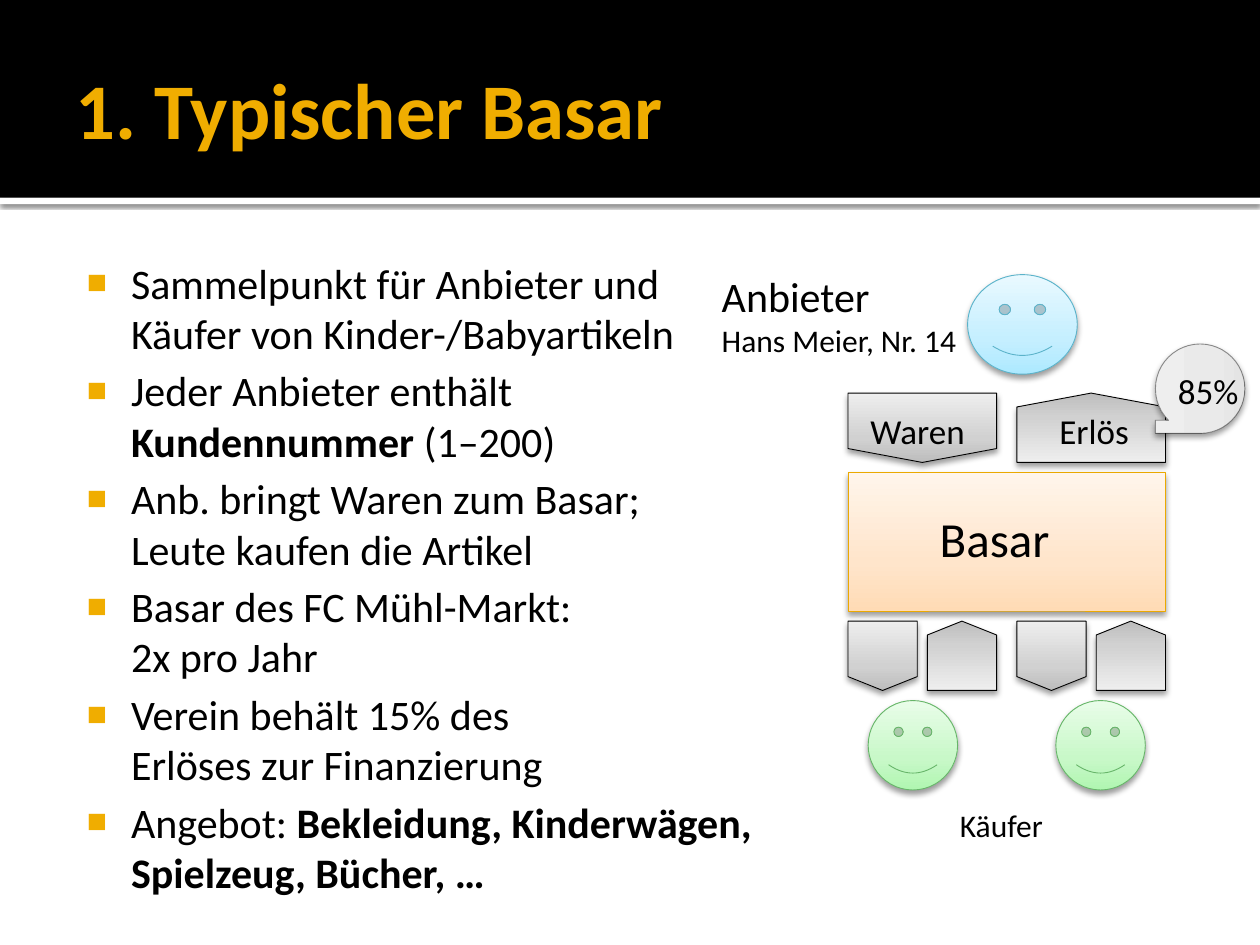
import copy
import pptx
import pptx.dml.color
import pptx.enum.shapes
import pptx.enum.text
import pptx.oxml
import pptx.oxml.ns
import pptx.util

Inches = pptx.util.Inches
Pt = pptx.util.Pt
KIND = pptx.enum.shapes.MSO_SHAPE
FIT = pptx.enum.text.MSO_AUTO_SIZE
GOLD, BLACK, WHITE = "F0AD00", "000000", "FFFFFF"
GREY = ["BDBDBD", "D1D1D1", "EEEEEE"]
PALE = ["E4E4E4", "EAEAEA", "EEEEEE"]
PEACH = ["FFDBB5", "FFE5CB", "FFF5EB"]
BLUE = ["ADE9FF", "C5EFFF", "E9F9FF"]
GREEN = ["B0F6B1", "C8F8C8", "E9FDE9"]
ITEMS = [
    [("Sammelpunkt für Anbieter und\nKäufer von Kinder-/Babyartikeln", False)],
    [("Jeder Anbieter enthält\n", False), ("Kundennummer", True), (" (1–200)", False)],
    [("Anb. bringt Waren zum Basar;\nLeute kaufen die Artikel", False)],
    [("Basar des FC Mühl-Markt:\n2x pro Jahr", False)],
    [("Verein behält 15% des\nErlöses zur Finanzierung", False)],
    [("Angebot: ", False), ("Bekleidung, Kinderwägen,\nSpielzeug, Bücher, …", True)],
]


def color(code):
    return pptx.dml.color.RGBColor.from_string(code)


def node(tag, text="", **attrs):
    pairs = " ".join(f'{key}="{val}"' for key, val in attrs.items())
    space = pptx.oxml.ns.nsdecls("a")
    return pptx.oxml.parse_xml(f"<a:{tag} {space} {pairs}>{text}</a:{tag}>")


def style(par, size, code=BLACK):
    par.font.name = "Calibri"
    par.font.size = Pt(size)
    par.font.color.rgb = color(code)


def write(par, text):
    runs = []
    for num, line in enumerate(text.split("\n")):
        if num:
            par.add_line_break()
        if line:
            run = par.add_run()
            run.text = line
            runs.append(run)
    return runs


def place(shape, box):
    shape.left, shape.top, shape.width, shape.height = map(Inches, box)


def inset(frame, left, top, right, low):
    frame.margin_left, frame.margin_top = Inches(left), Inches(top)
    frame.margin_right, frame.margin_bottom = Inches(right), Inches(low)


def shade(shape, alpha=38, blur=3.5, dist=2):
    shape.shadow.inherit = False
    tone = f'<a:srgbClr val="{BLACK}"><a:alpha val="{alpha * 1000}"/></a:srgbClr>'
    effect = node("outerShdw", tone, blurRad=Pt(blur), dist=Pt(dist), dir=5400000,
                  algn="ctr", rotWithShape=0)
    shape.element.spPr.find(pptx.oxml.ns.qn("a:effectLst")).append(effect)


def bar(slide, box, code):
    shape = slide.shapes.add_shape(KIND.RECTANGLE, *map(Inches, box))
    shape.fill.solid()
    shape.fill.fore_color.rgb = color(code)
    shape.line.fill.background()
    shape.shadow.inherit = False
    return shape


def figure(slide, kind, box, tones, edge=BLACK, flip=None, angle=90):
    shape = slide.shapes.add_shape(kind, *map(Inches, box))
    shape.fill.gradient()
    shape.fill.gradient_angle = angle
    stops = next(shape.element.spPr.iter(pptx.oxml.ns.qn("a:gsLst")))
    stops.insert(1, copy.deepcopy(stops[0]))
    for stop, spot, tone in zip(shape.fill.gradient_stops, (0, 0.35, 1), tones):
        stop.position = spot
        stop.color.rgb = color(tone)
    shape.line.color.rgb = color(edge)
    shape.line.width = Pt(0.5)
    if flip:
        shape.element.spPr.xfrm.set(flip, "1")
    shade(shape)
    return shape


def label(slide, box, text, size):
    frame = slide.shapes.add_textbox(*map(Inches, box)).text_frame
    frame.word_wrap = True
    frame.auto_size = FIT.SHAPE_TO_FIT_TEXT
    par = frame.paragraphs[0]
    style(par, size)
    return write(par, text)


def header(slide, left, top, width, height):
    strip = bar(slide, (left, top + height, width, 0.05), WHITE)
    shade(strip, 60, 2.5, 0.8)
    band = bar(slide, (left, top, width, height), BLACK)
    tree = slide.shapes.element
    tree.insert(2, strip.element)
    tree.insert(3, band.element)
    title = slide.shapes.title
    place(title, (left + 0.5, top + 0.17, width - 1, 1.37))
    frame = title.text_frame
    inset(frame, 0.1, 0.05, 0.05, 0.05)
    frame.auto_size = FIT.NONE
    frame.vertical_anchor = pptx.enum.text.MSO_ANCHOR.MIDDLE
    par = frame.paragraphs[0]
    par.alignment = pptx.enum.text.PP_ALIGN.LEFT
    style(par, 45, GOLD)
    par.font.bold = True
    write(par, "1. Typischer Basar")


def bullet(par):
    prop = par._p.get_or_add_pPr()
    prop.set("marL", str(Inches(0.48)))
    prop.set("indent", str(Inches(-0.35)))
    par.space_before, par.space_after = Pt(0), Pt(4)
    marks = [node("buClr", f'<a:srgbClr val="{GOLD}"/>'), node("buSzPct", val=80000),
             node("buFont", typeface="Arial"), node("buChar", char="■")]
    spot = prop.index(prop.find(pptx.oxml.ns.qn("a:spcAft"))) + 1
    for num, mark in enumerate(marks):
        prop.insert(spot + num, mark)


def points(slide, left, top, width, height):
    body = slide.placeholders[1]
    place(body, (left, top, width, height))
    frame = body.text_frame
    inset(frame, 0.06, 0.1, 0.1, 0.05)
    frame.auto_size = FIT.NONE
    for num, item in enumerate(ITEMS):
        par = frame.add_paragraph() if num else frame.paragraphs[0]
        style(par, 24)
        bullet(par)
        for text, bold in item:
            for run in write(par, text):
                if bold:
                    run.font.bold = True


def market(slide, left, top, width):
    gap, unit, tall = 0.08, 0.55, 1.1
    half = 2 * unit + gap
    right = left + width - half
    stall = top + unit + gap
    lower = stall + tall + gap
    faces = lower + unit + gap
    page = KIND.FLOWCHART_OFFPAGE_CONNECTOR

    figure(slide, KIND.RECTANGLE, (left, stall, width, tall), PEACH, "EBA900")
    label(slide, (left + 0.63, stall + 0.24, 1.73, 0.57), "Basar", 28)
    figure(slide, KIND.SMILEY_FACE, (left + 0.95, top - 0.94, 0.87, 0.79), BLUE, "5BB3CA")
    figure(slide, page, (left, top, half, unit), GREY)
    label(slide, (left + gap, top + gap, half, 0.44), "Waren", 20)
    runs = label(slide, (left - 1.1, top - 1.02, 2.2, 0.81), "Anbieter\nHans Meier, Nr. 14", 24)
    runs[1].font.size = Pt(18)
    figure(slide, page, (right, top, half, unit), GREY, flip="flipV")
    label(slide, (right + 0.24, top + gap, 1.1, 0.44), "Erlös", 20)
    tape = figure(slide, KIND.FLOWCHART_SEQUENTIAL_ACCESS_STORAGE,
                  (left + width - gap, top - 0.39, 0.71, 0.71), PALE, flip="flipH", angle=0)
    edge = tape.line._ln.find(".//" + pptx.oxml.ns.qn("a:srgbClr"))
    edge.append(node("alpha", val=42000))
    label(slide, (left + width, top - 0.24, 0.75, 0.44), "85%", 20)

    for side, face in ((left, left + 0.16), (right, left + width - 0.16 - 0.71)):
        figure(slide, KIND.SMILEY_FACE, (face, faces, 0.71, 0.71), GREEN, "67B569")
        figure(slide, page, (side, lower, unit, unit), GREY)
        figure(slide, page, (side + unit + gap, lower, unit, unit), GREY, flip="flipV")
    label(slide, (left + 0.79, faces + 0.79, 1.26, 0.4), "Käufer", 18)


def main():
    deck = pptx.Presentation()
    deck.slide_width, deck.slide_height = Inches(10), Inches(7.5)
    slide = deck.slides.add_slide(deck.slide_layouts[1])
    header(slide, 0, 0, 10, 1.57)
    points(slide, 0.5, 1.94, 9, 5.06)
    market(slide, 6.73, 3.12, 2.52)
    deck.save("out.pptx")


if __name__ == "__main__":
    main()
